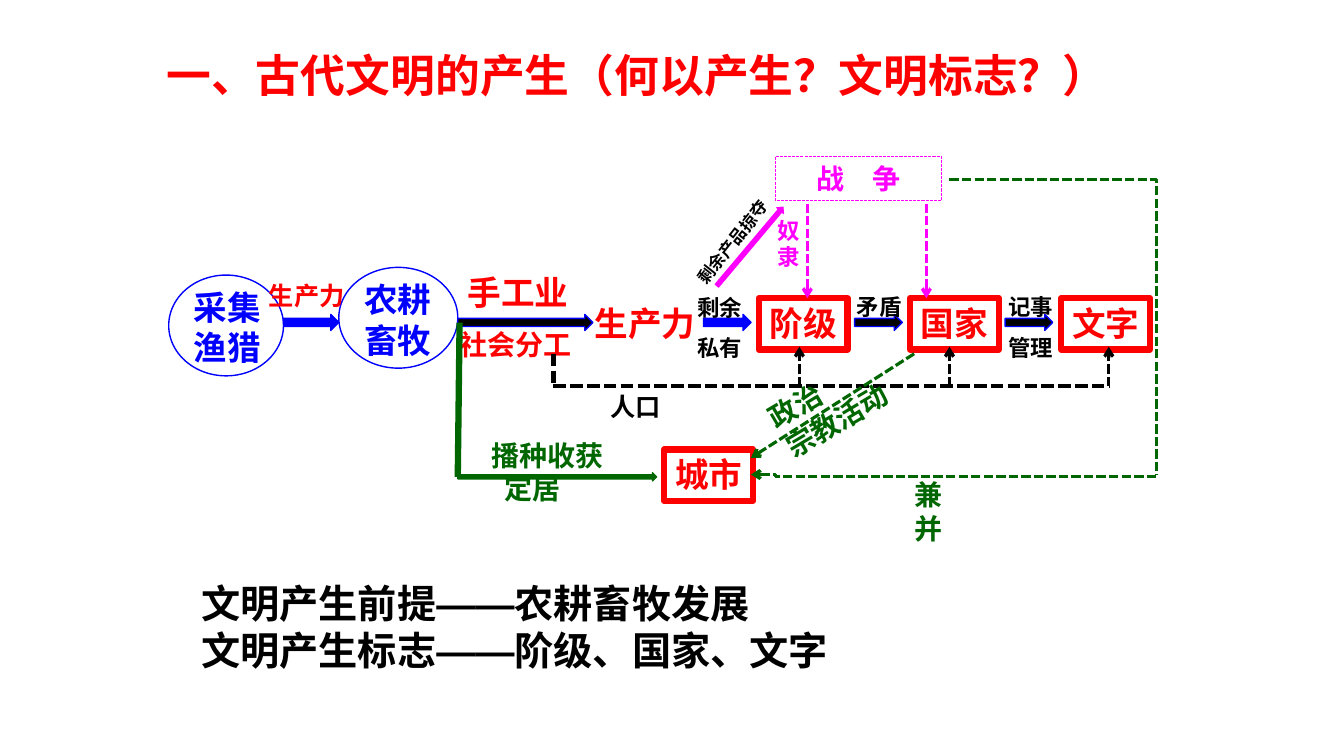
from dataclasses import dataclass

from lxml import etree
from pptx import Presentation
from pptx.dml.color import RGBColor
from pptx.enum.dml import MSO_LINE
from pptx.enum.shapes import MSO_CONNECTOR, MSO_SHAPE
from pptx.enum.text import MSO_ANCHOR, MSO_AUTO_SIZE, PP_ALIGN
from pptx.oxml.ns import qn
from pptx.util import Pt

OVAL, BOX, ARROW = MSO_SHAPE.OVAL, MSO_SHAPE.RECTANGLE, MSO_SHAPE.RIGHT_ARROW
STRAIGHT, ELBOW = MSO_CONNECTOR.STRAIGHT, MSO_CONNECTOR.ELBOW
DASHED = MSO_LINE.SQUARE_DOT
TOP, FIT = MSO_ANCHOR.TOP, MSO_AUTO_SIZE.SHAPE_TO_FIT_TEXT
LEFT, CENTER = PP_ALIGN.LEFT, PP_ALIGN.CENTER


@dataclass(frozen=True)
class Theme:
    red: str = "FF0000"
    blue: str = "0000FF"
    black: str = "000000"
    green: str = "006600"
    magenta: str = "FF00FF"
    sans: str = "Noto Sans CJK SC"
    body: str = "Calibri"
    summary_font: str = "Arial"
    title: int = 32
    summary: int = 28
    node: int = 24
    label: int = 20
    note: int = 18
    small: int = 16
    tiny: int = 12


class Diagram:
    """Draws the parts of a flow diagram on one slide in a shared theme."""

    def __init__(self, slide, theme):
        self.slide = slide
        self.theme = theme

    def set_text(self, holder, text, size, color, font, align=LEFT, spacing=1.0, wrap=False):
        frame = holder.text_frame
        frame.text = text
        frame.word_wrap = wrap
        frame.auto_size = FIT
        frame.vertical_anchor = TOP
        for paragraph in frame.paragraphs:
            paragraph.alignment = align
            paragraph.line_spacing = spacing
            for run in paragraph.runs:
                run.font.size = Pt(size)
                run.font.bold = True
                run.font.name = font
                run.font.color.rgb = RGBColor.from_string(color)
                east_asian = etree.SubElement(run.font._element, qn("a:ea"))
                east_asian.set("typeface", font)

    def title(self, text, left, top, width, height):
        heading = self.slide.shapes.title
        heading.left, heading.top = Pt(left), Pt(top)
        heading.width, heading.height = Pt(width), Pt(height)
        self.set_text(heading, text, self.theme.title, self.theme.red, self.theme.sans)

    def label(self, text, left, top, width, height, size, color, font,
              spacing=1.0, rotation=0, wrap=False):
        label = self.slide.shapes.add_textbox(Pt(left), Pt(top), Pt(width), Pt(height))
        label.rotation = rotation
        self.set_text(label, text, size, color, font, spacing=spacing, wrap=wrap)
        return label

    def outline(self, kind, left, top, width, height, line, weight, fill=None, rotation=0):
        shape = self.slide.shapes.add_shape(kind, Pt(left), Pt(top), Pt(width), Pt(height))
        shape.shadow.inherit = False
        shape.rotation = rotation
        shape.line.color.rgb = RGBColor.from_string(line)
        shape.line.width = Pt(weight)
        if fill:
            shape.fill.solid()
            shape.fill.fore_color.rgb = RGBColor.from_string(fill)
        else:
            shape.fill.background()
        return shape

    def stage(self, text, left, top, width):
        theme = self.theme
        self.outline(OVAL, left, top, width, 72, theme.blue, 1)
        self.label(text, left + 11, top + 5, 63.5, 65.5, theme.node, theme.blue, theme.body)

    def marker(self, text, left, top):
        theme = self.theme
        box = self.outline(BOX, left, top, 63.4, 36.7, theme.red, 4.5)
        self.set_text(box, text, theme.node, theme.red, theme.body, CENTER)

    def flow(self, left, width, fill):
        self.outline(ARROW, left, 224.6, width, 11.5, self.theme.blue, 1, fill)

    def link(self, start, end, color, weight=2.25, head=True, dashed=True,
             kind=STRAIGHT, preset=None, bend=None):
        link = self.slide.shapes.add_connector(kind, *map(Pt, start + end))
        link.line.color.rgb = RGBColor.from_string(color)
        link.line.width = Pt(weight)
        if dashed:
            link.line.dash_style = DASHED
        properties = link._element.spPr
        geometry = properties.find(qn("a:prstGeom"))
        if preset:
            geometry.set("prst", preset)
        if bend:
            guide = etree.SubElement(geometry.find(qn("a:avLst")), qn("a:gd"))
            guide.set("name", "adj1")
            guide.set("fmla", f"val {bend}")
        if head:
            etree.SubElement(properties.find(qn("a:ln")), qn("a:tailEnd")).set("type", "arrow")
        etree.SubElement(properties, qn("a:effectLst"))


def main():
    theme = Theme()
    deck = Presentation()
    deck.slide_width, deck.slide_height = Pt(960), Pt(540)
    diagram = Diagram(deck.slides.add_slide(deck.slide_layouts[5]), theme)
    red, black, green, magenta = theme.red, theme.black, theme.green, theme.magenta
    sans, body = theme.sans, theme.body

    diagram.title("一、古代文明的产生（何以产生？文明标志？）", 111.6, 30.2, 695.5, 46)
    diagram.stage("采集\n渔猎", 120.5, 196.5, 82)
    diagram.stage("农耕\n畜牧", 242, 191, 85)

    for left, width, fill in ((202.5, 39.5, theme.blue), (327, 96.5, black),
                              (502.5, 34, theme.blue), (610.5, 34, black), (718, 34, black)):
        diagram.flow(left, width, fill)
    for index, sign in enumerate(("阶级", "国家", "文字")):
        diagram.marker(sign, 542 + 108 * index, 213)
    diagram.marker("城市", 474.5, 321)

    diagram.outline(ARROW, 327, 337.7, 142, 5.8, green, 1, green)
    diagram.outline(ARROW, 499, 172.8, 73.4, 6.5, magenta, 0.75, magenta, 310.1)

    diagram.label("生产力", 185, 196.6, 85, 28.8, theme.note, red, sans, wrap=True)
    diagram.label("手工业", 327, 191, 87.8, 36.7, theme.node, red, body)
    diagram.label("社会分工", 321, 230.4, 95.8, 31.7, theme.label, red, body)
    diagram.label("生产力", 417.6, 213, 87.8, 36.7, theme.node, red, body)
    diagram.label("人口", 429, 275.8, 51, 28.8, theme.note, black, body)
    for text, left, height in (("剩余\n私有", 491, 62), ("矛盾", 605, 31.7),
                               ("记事\n管理", 713, 61)):
        diagram.label(text, left, 196.6, 47, height, theme.small, black, sans, spacing=1.5)
    settling = diagram.label("播种收获\n定居", 344, 309.6, 95.8, 55.4, theme.label, green, sans)
    settling.text_frame.paragraphs[1]._p.get_or_add_pPr().set("marL", str(Pt(9)))

    population_level = 275.8
    diagram.link((395.3, 252.7), (395.3, population_level), black, 3, head=False)
    diagram.link((395.3, population_level), (792, population_level), black, 3, head=False)
    for x in (571, 678.2, 792):
        diagram.link((x, population_level), (x, 247.7), black)

    war = diagram.outline(BOX, 553.7, 111.6, 118.8, 31.7, magenta, 0.75)
    war.line.dash_style = DASHED
    diagram.set_text(war, "战　争", theme.label, magenta, body, CENTER, wrap=True)
    for x in (576.7, 661.7):
        diagram.link((x, 145.4), (x, 213), magenta)
    diagram.label("剩余产品掠夺", 480.2, 162, 86.4, 21.6, theme.tiny, black, sans, rotation=308.4)
    diagram.label("奴\n隶", 548, 151.2, 31, 46, theme.small, magenta, sans)

    diagram.link((678.2, 128.2), (825.8, 339), green, head=False,
                 kind=ELBOW, preset="bentConnector2")
    diagram.link((825.8, 340.6), (536.4, 339), green, kind=ELBOW, bend=94000)
    diagram.link((653, 252.7), (536.4, 327), green)
    diagram.link((328.3, 230.4), (327, 340.6), green, 4.5, head=False, dashed=False)
    diagram.label("兼并", 646, 337.7, 54, 31.7, theme.label, green, sans)
    diagram.label("政治\n宗教活动", 544.3, 262, 95.8, 55.4, theme.label, green, sans,
                  rotation=329.3)

    diagram.label("文明产生前提——农耕畜牧发展\n文明产生标志——阶级、国家、文字",
                  136.8, 410.4, 468.7, 75, theme.summary, black, theme.summary_font)
    deck.save("out.pptx")


if __name__ == "__main__":
    main()
